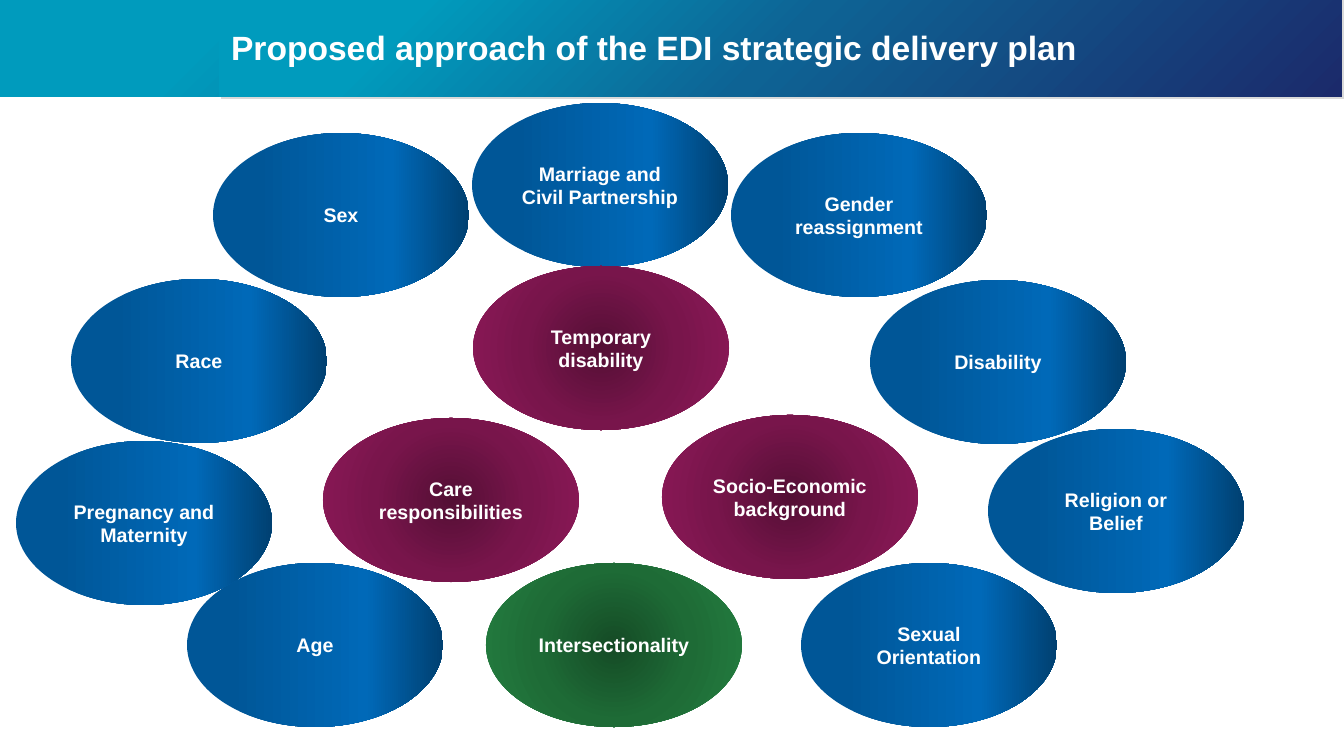
import pptx
import pptx.util
import pptx.dml.color
import pptx.enum.shapes
import pptx.enum.text
import pptx.oxml
import pptx.oxml.ns
from dataclasses import dataclass

SCALE = 914400 / 100.8
SHAPE = pptx.enum.shapes.MSO_SHAPE
ALIGN = pptx.enum.text.PP_ALIGN
MIDDLE = pptx.enum.text.MSO_ANCHOR.MIDDLE


@dataclass(frozen=True)
class Theme:
    font: str = "Arial"
    head: int = 24
    label: int = 14
    white: str = "FFFFFF"
    grey: str = "D9D9D9"
    band: tuple = ((17, "009BBD"), (50, "0E6394"), (100, "1B2A6B"))
    blue: tuple = ((17, "005697"), (70, "0069B8"), (100, "004071"))
    plum: tuple = ((0, "540F35"), (50, "78154B"), (100, "8E1959"))
    green: tuple = ((0, "154B26"), (50, "1E6B36"), (100, "247F41"))


def px(*sizes):
    return [round(size * SCALE) for size in sizes]


def rgb(code):
    return pptx.dml.color.RGBColor.from_string(code)


class Deck:
    def __init__(self, theme):
        self.theme = theme
        self.prs = pptx.Presentation()
        self.prs.slide_width, self.prs.slide_height = px(1344, 756)
        self.slide = self.prs.slides.add_slide(self.prs.slide_layouts[5])

    def shape(self, kind, box, color):
        shape = self.slide.shapes.add_shape(kind, *px(*box))
        shape.shadow.inherit = False
        shape.fill.solid()
        shape.fill.fore_color.rgb = rgb(color)
        shape.line.fill.background()
        return shape

    def blend(self, shape, stops, angle=None):
        marks = "".join(
            f'<a:gs pos="{pos * 1000}"><a:srgbClr val="{code}"/></a:gs>'
            for pos, code in stops)
        if angle is None:
            way = ('<a:path path="circle"><a:fillToRect l="50000" t="50000" '
                   'r="50000" b="50000"/></a:path>')
        else:
            way = f'<a:lin ang="{angle * 60000}" scaled="0"/>'
        space = pptx.oxml.ns.nsdecls("a")
        grad = pptx.oxml.parse_xml(
            f'<a:gradFill {space} rotWithShape="1"><a:gsLst>{marks}</a:gsLst>'
            f'{way}</a:gradFill>')
        props = shape._element.spPr
        props.replace(props.find(pptx.oxml.ns.qn("a:solidFill")), grad)

    def label(self, shape, text, size, align):
        frame = shape.text_frame
        frame.text = text
        frame.word_wrap = True
        frame.vertical_anchor = MIDDLE
        para = frame.paragraphs[0]
        para.alignment = align
        font = para.runs[0].font
        font.name = self.theme.font
        font.size = pptx.util.Pt(size)
        font.bold = True
        font.color.rgb = rgb(self.theme.white)
        return para

    def band(self, box):
        shape = self.shape(SHAPE.RECTANGLE, box, self.theme.white)
        self.blend(shape, self.theme.band, 45)

    def rule(self, *ends):
        line = self.slide.shapes.add_connector(
            pptx.enum.shapes.MSO_CONNECTOR.STRAIGHT, *px(*ends))
        line.line.color.rgb = rgb(self.theme.white)
        line.line.width = pptx.util.Pt(0.5)
        space = pptx.oxml.ns.nsdecls("a")
        line._element.spPr.append(
            pptx.oxml.parse_xml(f"<a:effectLst {space}/>"))

    def title(self, text, box):
        title = self.slide.shapes.title
        title.left, title.top, title.width, title.height = px(*box)
        para = self.label(title, text, self.theme.head, ALIGN.LEFT)
        para.line_spacing = 0.9
        self.slide.shapes._spTree.append(title._element)

    def oval(self, text, left, top, stops, angle=None):
        shape = self.shape(SHAPE.OVAL, (left, top, 256, 164), self.theme.white)
        self.blend(shape, stops, angle)
        self.label(shape, text, self.theme.label, ALIGN.CENTER)

    def save(self):
        self.prs.save("out.pptx")


def main():
    theme = Theme()
    deck = Deck(theme)
    deck.band((0, -2, 1344, 99))
    deck.shape(SHAPE.RECTANGLE, (221, 0, 1123, 99), theme.grey)
    deck.rule(220, 0, 220, 99)
    deck.band((219, -2, 1123, 99))
    deck.title("Proposed approach of the EDI strategic delivery plan",
               (221, 11, 1123, 77))

    blue, plum, green = (theme.blue, 0), (theme.plum,), (theme.green,)
    ovals = (
        ("Race", 71, 279, blue),
        ("Intersectionality", 486, 563, green),
        ("Care responsibilities", 323, 418, plum),
        ("Socio-Economic background", 662, 415, plum),
        ("Sexual Orientation", 801, 563, blue),
        ("Sex", 213, 133, blue),
        ("Religion or Belief", 988, 429, blue),
        ("Age", 187, 563, blue),
        ("Pregnancy and Maternity", 16, 441, blue),
        ("Marriage and Civil Partnership", 472, 103, blue),
        ("Gender reassignment", 731, 133, blue),
        ("Disability", 870, 280, blue),
        ("Temporary disability", 473, 266, plum),
    )
    for text, left, top, look in ovals:
        deck.oval(text, left, top, *look)
    deck.save()


if __name__ == "__main__":
    main()
